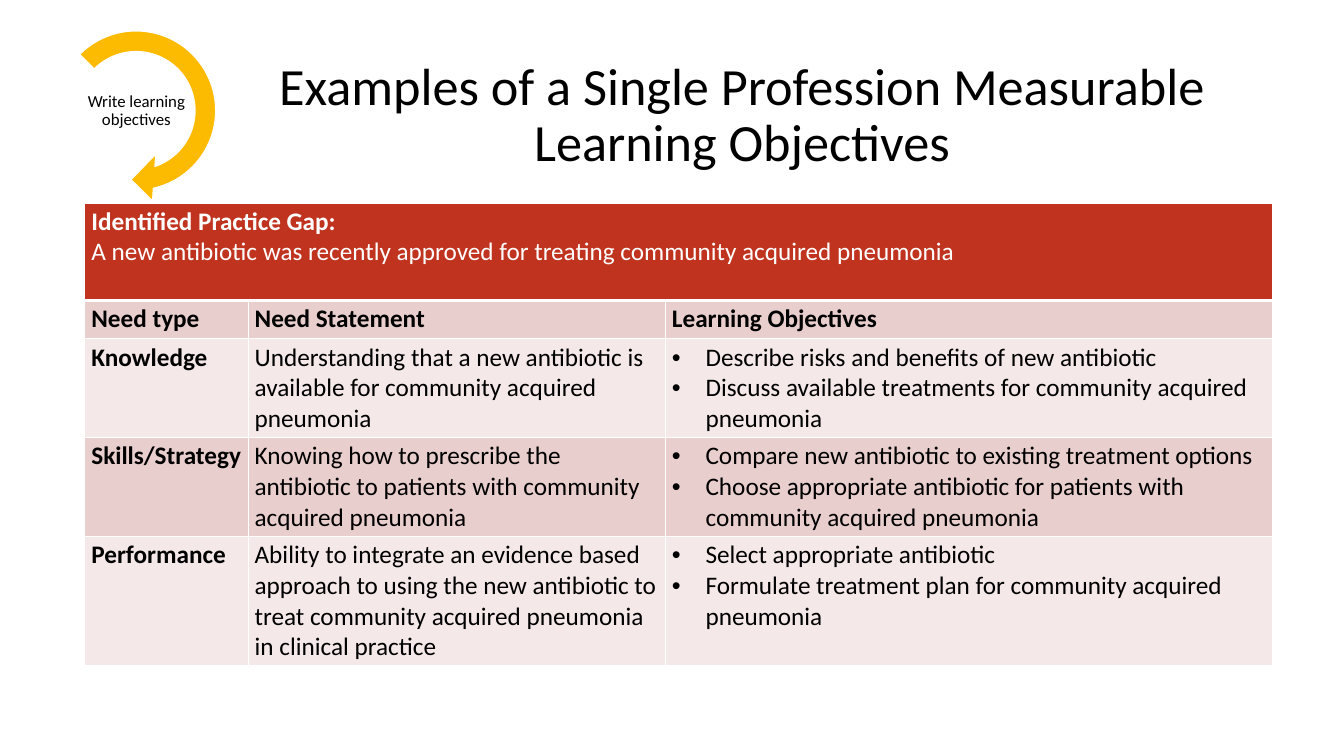
from dataclasses import dataclass

from lxml import etree
from pptx import Presentation
from pptx.dml.color import RGBColor
from pptx.enum import shapes, text
from pptx.oxml import ns
from pptx import util as u


@dataclass(frozen=True)
class Theme:
    font: str = "Calibri"
    ink: str = "000000"
    white: str = "FFFFFF"
    gold: str = "FCBA00"
    red: str = "C0331F"
    rose: str = "E8CECD"
    pale: str = "F4E8E8"
    title: int = 56
    body: int = 27
    small: int = 18
    thin: int = 1
    thick: int = 3


class Deck:
    COLS, ROWS = 20, 11.25  # grid of the slide

    def __init__(self, theme):
        self.theme = theme
        self.file = Presentation()
        self.file.slide_width = u.Inches(20)
        self.file.slide_height = u.Inches(11.25)
        self.slide = self.file.slides.add_slide(self.file.slide_layouts[5])

    def wide(self, cols):
        return round(self.file.slide_width * cols / self.COLS)

    def high(self, rows):
        return round(self.file.slide_height * rows / self.ROWS)

    def place(self, left, top, width, height):
        return self.wide(left), self.high(top), self.wide(width), self.high(height)

    def run(self, para, words, size, color, bold=False):
        run = para.add_run()
        run.text = words
        font = run.font
        font.name, font.size, font.bold = self.theme.font, u.Pt(size), bold
        font.color.rgb = RGBColor.from_string(color)

    def center(self, frame, words, size):
        frame.word_wrap = True
        frame.auto_size = text.MSO_AUTO_SIZE.NONE
        frame.vertical_anchor = text.MSO_ANCHOR.MIDDLE
        para = frame.paragraphs[0]
        para.alignment = text.PP_ALIGN.CENTER
        para.line_spacing = 0.9
        self.run(para, words, size, self.theme.ink)

    def title(self, words, *box):
        shape = self.slide.shapes.title
        shape.left, shape.top, shape.width, shape.height = self.place(*box)
        self.center(shape.text_frame, words, self.theme.title)

    def arrow(self, bends, *box):
        shape = self.slide.shapes.add_shape(
            shapes.MSO_SHAPE.CIRCULAR_ARROW, *self.place(*box))
        for spot, bend in enumerate(bends):
            shape.adjustments[spot] = bend
        shape.shadow.inherit = False
        shape.fill.solid()
        shape.fill.fore_color.rgb = RGBColor.from_string(self.theme.gold)
        shape.line.color.rgb = RGBColor.from_string(self.theme.white)
        shape.line.width = u.Pt(self.theme.thin)

    def label(self, words, *box):
        frame = self.slide.shapes.add_textbox(*self.place(*box)).text_frame
        frame.margin_left = frame.margin_right = u.Inches(0.01)
        frame.margin_top = frame.margin_bottom = u.Inches(0.01)
        self.center(frame, words, self.theme.small)

    def table(self, widths, heights, *box):
        frame = self.slide.shapes.add_table(
            len(heights), len(widths), *self.place(*box))
        grid = frame.table
        grid.horz_banding = False
        for col, width in zip(grid.columns, widths):
            col.width = self.wide(width)
        for row, height in zip(grid.rows, heights):
            row.height = self.high(height)
        frame.height = self.high(box[3])
        return grid

    def paint(self, cell, color, top, base):
        props = cell._tc.get_or_add_tcPr()
        thin = self.theme.thin
        for side, width in zip("LRTB", (thin, thin, top, base)):
            line = etree.SubElement(props, ns.qn(f"a:ln{side}"), w=str(u.Pt(width)))
            fill = etree.SubElement(line, ns.qn("a:solidFill"))
            etree.SubElement(fill, ns.qn("a:srgbClr"), val=self.theme.white)
        cell.fill.solid()
        cell.fill.fore_color.rgb = RGBColor.from_string(color)

    def enter(self, cell, lines, color, bold, dots=False):
        frame = cell.text_frame
        for spot, words in enumerate(lines):
            para = frame.add_paragraph() if spot else frame.paragraphs[0]
            if dots:
                self.dot(para)
            self.run(para, words, self.theme.body, color, bold and spot == 0)

    def dot(self, para):
        props = para._p.get_or_add_pPr()
        props.set("marL", str(u.Inches(0.5)))
        props.set("indent", str(u.Inches(-0.5)))
        etree.SubElement(props, ns.qn("a:buFont"), typeface="Arial")
        etree.SubElement(props, ns.qn("a:buChar"), char="•")


GAP = ["Identified Practice Gap:",
       "A new antibiotic was recently approved for treating community acquired pneumonia"]
NEEDS = [
    ("Need type", "Need Statement", ["Learning Objectives"]),
    ("Knowledge",
     "Understanding that a new antibiotic is available for community acquired pneumonia",
     ["Describe risks and benefits of new antibiotic",
      "Discuss available treatments for community acquired pneumonia"]),
    ("Skills/Strategy",
     "Knowing how to prescribe the antibiotic to patients with community acquired pneumonia",
     ["Compare new antibiotic to existing treatment options",
      "Choose appropriate antibiotic for patients with community acquired pneumonia"]),
    ("Performance",
     "Ability to integrate an evidence based approach to using the new antibiotic to "
     "treat community acquired pneumonia in clinical practice",
     ["Select appropriate antibiotic",
      "Formulate treatment plan for community acquired pneumonia"]),
]


def main():
    theme = Theme()
    deck = Deck(theme)

    # Title and step marker
    deck.title("Examples of a Single Profession Measurable Learning Objectives",
               3.15, 1.29, 15.79, 0.89)
    deck.arrow((0.11, 11.42, 45, 135, 0.125), 0.65, 0.27, 2.75, 2.75)
    deck.label("Write learning objectives", 1.26, 1.27, 1.54, 0.77)

    # Practice gap across the top of the table
    grid = deck.table((2.43, 6.21, 9.03), (1.45, 0.57) + (0.94,) * 3,
                      1.26, 3.02, 17.68, 6.82)
    for col in range(3):
        deck.paint(grid.cell(0, col), theme.red, theme.thin, theme.thick)
    grid.cell(0, 0).merge(grid.cell(0, 2))
    deck.enter(grid.cell(0, 0), GAP, theme.white, True)

    # Head row, then one row per need
    for row, (kind, need, goals) in enumerate(NEEDS, 1):
        head = row == 1
        shade = theme.rose if row % 2 else theme.pale
        for col, lines in enumerate(([kind], [need], goals)):
            cell = grid.cell(row, col)
            deck.paint(cell, shade, theme.thick if head else theme.thin, theme.thin)
            deck.enter(cell, lines, theme.ink, head or col == 0,
                       dots=col == 2 and not head)

    deck.file.save("out.pptx")


if __name__ == "__main__":
    main()
